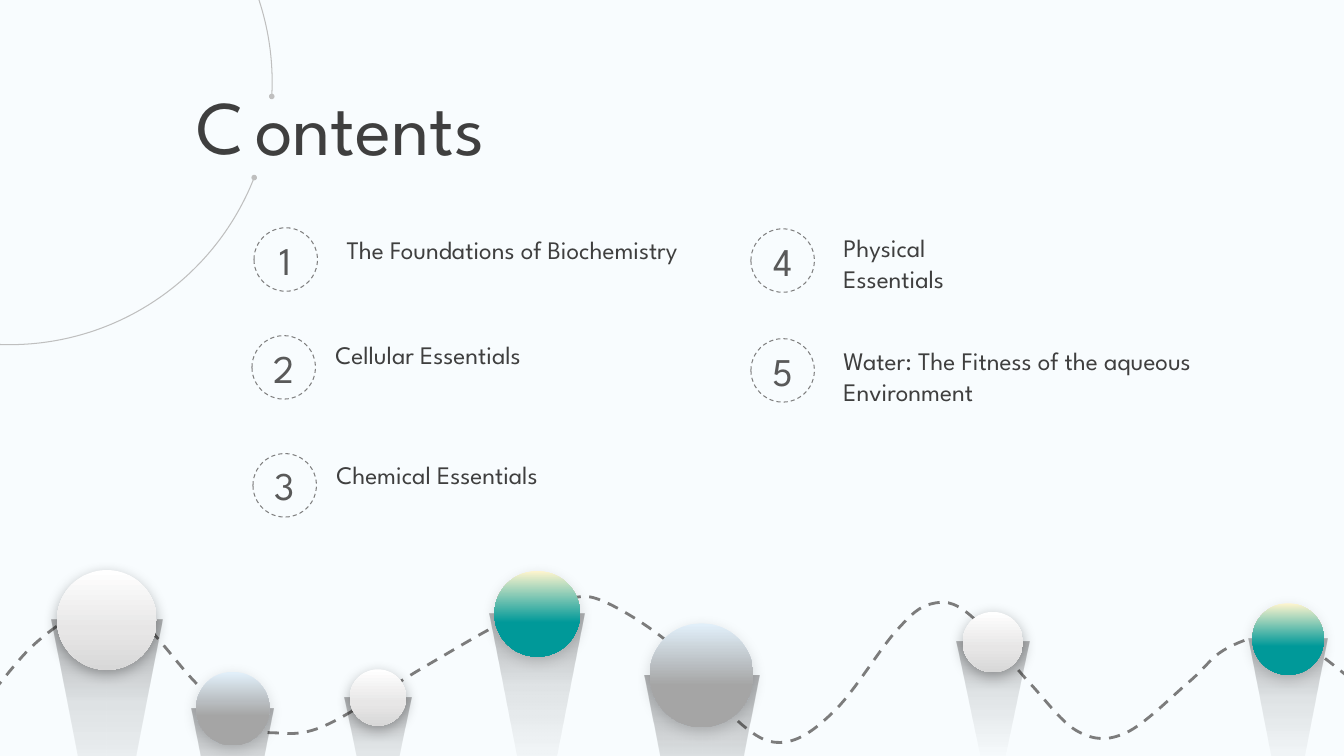
"""Build the contents slide: numbered topics above a row of balls on a wave."""
from lxml import etree
from pptx import Presentation, util as u
from pptx.dml.color import RGBColor
from pptx.enum import dml, shapes, text
from pptx.oxml.ns import qn

FONT = "League Spartan"
PAPER = RGBColor(0xF8, 0xFC, 0xFE)
INK = RGBColor(0x3F, 0x3F, 0x3F)
NUMBER = RGBColor(0x59, 0x59, 0x59)
RING = RGBColor(0x7F, 0x7F, 0x7F)
ARC = RGBColor(0xBF, 0xBF, 0xBF)
WAVE = RGBColor(0x7C, 0x7C, 0x7C)
BLACK = RGBColor(0, 0, 0)
WHITE = RGBColor(0xFF, 0xFF, 0xFF)
SILVER = RGBColor(0xE7, 0xE6, 0xE6)
PEARL = RGBColor(0xD8, 0xD8, 0xD8)
ICE = RGBColor(0xE1, 0xEF, 0xF9)
GREY = RGBColor(0xA5, 0xA5, 0xA5)
CREAM = RGBColor(0xFF, 0xF5, 0xCE)
TEAL = RGBColor(0x00, 0x99, 0x99)

HEADING = [("C", (1.85, 0.73, 0.82, 1.01)), ("ontents", (2.43, 0.74, 3.38, 1.01))]
RING_SIZE = 0.63
TOPIC_HEIGHT = 0.64
TOPICS = [
    ("The Foundations of Biochemistry", (2.52, 2.26), (3.34, 2.28), 3.82),
    ("Cellular Essentials", (2.5, 3.33), (3.23, 3.32), 2.24),
    ("Chemical Essentials", (2.51, 4.5), (3.24, 4.51), 2.23),
    ("Physical Essentials", (7.45, 2.27), (8.27, 2.26), 2.03),
    ("Water: The Fitness of the aqueous Environment", (7.45, 3.36), (8.27, 3.38), 3.73),
]
WAVE_POINTS = [
    (-0.06, 6.85), (0.29, 6.44), (0.64, 6.16), (0.92, 6.02), (1.25, 6.06), (1.49, 6.25),
    (1.91, 6.74), (2.24, 7.05), (2.46, 7.2), (2.71, 7.27), (3.22, 7.2), (4.22, 6.61),
    (5, 6.17), (5.54, 5.98), (5.95, 5.95), (6.7, 6.43), (7.35, 7.18), (7.8, 7.36),
    (8.3, 7.03), (8.89, 6.26), (9.24, 5.99), (9.61, 6.09), (10.21, 6.77), (10.7, 7.26),
    (11.17, 7.27), (11.79, 6.77), (12.14, 6.45), (12.58, 6.3), (12.95, 6.4), (13.42, 6.75),
]
BALL_STYLES = {
    "white": ([(0, WHITE, 100), (60, SILVER, 100), (100, PEARL, 100)], 30),
    "grey": ([(0, ICE, 100), (1, ICE, 100), (60, GREY, 100), (100, GREY, 100)], 15),
    "teal": ([(0, CREAM, 100), (60, TEAL, 100), (100, TEAL, 100)], 15),
}
BEAM_STOPS = [(0, BLACK, 0), (30, BLACK, 0), (50, BLACK, 5), (70, BLACK, 10), (100, BLACK, 30)]
BEAM_SHARES = [(-1, 1), (-0.67, 0.67), (-0.07, 0), (0, 0), (0.07, 0), (0.67, 0.67), (1, 1)]
BALLS = [
    ("white", 1.06, 6.15, 0.99, 1.1, 2.72),
    ("grey", 2.31, 7.03, 0.73, 0.81, 2),
    ("white", 3.75, 6.92, 0.56, 0.66, 1.53),
    ("teal", 5.33, 6.09, 0.85, 0.94, 2.33),
    ("grey", 6.96, 6.7, 1.03, 1.14, 2.8),
    ("white", 9.85, 6.37, 0.6, 0.72, 1.65),
    ("teal", 12.78, 6.34, 0.71, 0.78, 1.93),
]


def inches(*lengths):
    return [u.Inches(length) for length in lengths]


def smooth_curve(anchors):
    padded = [anchors[0], *anchors, anchors[-1]]
    curve = [anchors[0]]
    for before, start, end, after in zip(padded, padded[1:], padded[2:], padded[3:]):
        first = [s + (e - b) / 6 for b, s, e in zip(before, start, end)]
        second = [e - (a - s) / 6 for s, e, a in zip(start, end, after)]
        curve += [first, second, end]
    return curve


def add_curve(parent, points, closed):
    corners = [inches(*point) for point in points]
    builder = parent.build_freeform(*corners[0])
    builder.add_line_segments(corners[1:], close=closed)
    shape = builder.convert_to_shape()
    shape.shadow.inherit = False
    lines = list(shape.element.spPr.iter(qn("a:lnTo")))
    for first, second, end in zip(lines[::3], lines[1::3], lines[2::3]):
        bend = etree.Element(qn("a:cubicBezTo"))
        first.addprevious(bend)
        for line in (first, second, end):
            bend.append(line[0])
            line.getparent().remove(line)
    return shape


def add_preset(parent, preset, *place):
    shape = parent.add_shape(preset, *inches(*place))
    shape.shadow.inherit = False
    return shape


def draw_line(shape, color, width, dash=None):
    shape.fill.background()
    shape.line.color.rgb = color
    shape.line.width = u.Pt(width)
    if dash:
        shape.line.dash_style = dash


def add_color(parent, color, opacity):
    node = etree.SubElement(parent, qn("a:srgbClr"), val=str(color))
    if opacity < 100:
        etree.SubElement(node, qn("a:alpha"), val=str(opacity * 1000))


def fill_downward(shape, stops):
    shape.line.fill.background()
    shape.fill.gradient()
    gradient = shape.element.spPr.find(qn("a:gradFill"))
    for child in list(gradient):
        gradient.remove(child)
    gradient.set("rotWithShape", "1")
    stop_list = etree.SubElement(gradient, qn("a:gsLst"))
    for position, color, opacity in stops:
        stop = etree.SubElement(stop_list, qn("a:gs"), pos=str(position * 1000))
        add_color(stop, color, opacity)
    etree.SubElement(gradient, qn("a:lin"), ang="5400000", scaled="0")


def add_ball(page, style, center, middle, size, beam_width, beam_height):
    stops, shade = BALL_STYLES[style]
    group = page.shapes.add_group_shape().shapes
    outline = [(center + x * beam_width / 2, middle + y * beam_height) for x, y in BEAM_SHARES]
    beam = add_curve(group, outline, True)
    beam.rotation = 180
    fill_downward(beam, BEAM_STOPS)
    ball = add_preset(group, shapes.MSO_SHAPE.OVAL,
                      center - size / 2, middle - size / 2, size, size)
    fill_downward(ball, stops)
    shadow = etree.SubElement(ball.element.spPr.find(qn("a:effectLst")), qn("a:outerShdw"),
                              blurRad=str(u.Pt(10)), dist=str(u.Pt(3)), dir="5400000",
                              algn="t", rotWithShape="0")
    add_color(shadow, BLACK, shade)


def write(shape, words, size, color, align=text.PP_ALIGN.LEFT, anchor=text.MSO_ANCHOR.TOP):
    frame = shape.text_frame
    frame.text = words
    frame.word_wrap = True
    frame.auto_size = text.MSO_AUTO_SIZE.NONE
    frame.vertical_anchor = anchor
    para = frame.paragraphs[0]
    para.alignment = align
    font = para.runs[0].font
    font.name, font.size, font.color.rgb = FONT, u.Pt(size), color


def main():
    deck = Presentation()
    deck.slide_width, deck.slide_height = inches(40 / 3, 7.5)
    page = deck.slides.add_slide(deck.slide_layouts[5])
    page.background.fill.solid()
    page.background.fill.fore_color.rgb = PAPER

    arc = add_preset(page.shapes, shapes.MSO_SHAPE.ARC, -2.51, -1.79, 5.21, 5.21)
    arc.adjustments[0], arc.adjustments[1] = 12.79, 1.88
    draw_line(arc, ARC, 0.75)
    for end in ("a:headEnd", "a:tailEnd"):
        etree.SubElement(arc.element.spPr.find(qn("a:ln")), qn(end),
                         type="oval", w="sm", len="sm")

    wave = add_curve(page.shapes, smooth_curve(WAVE_POINTS), False)
    draw_line(wave, WAVE, 2, dml.MSO_LINE.DASH)
    for ball in BALLS:
        add_ball(page, *ball)

    (initial, initial_place), (rest, rest_place) = HEADING
    write(page.shapes.add_textbox(*inches(*initial_place)), initial, 54, INK)
    title = page.shapes.title
    title.left, title.top, title.width, title.height = inches(*rest_place)
    write(title, rest, 54, INK)

    for number, (topic, ring_at, topic_at, width) in enumerate(TOPICS, 1):
        ring = add_preset(page.shapes, shapes.MSO_SHAPE.OVAL, *ring_at, RING_SIZE, RING_SIZE)
        draw_line(ring, RING, 0.75, dml.MSO_LINE.DASH)
        write(ring, str(number), 28, NUMBER, text.PP_ALIGN.CENTER, text.MSO_ANCHOR.MIDDLE)
        box = page.shapes.add_textbox(*inches(*topic_at, width, TOPIC_HEIGHT))
        write(box, topic, 18, INK)

    deck.save("out.pptx")


if __name__ == "__main__":
    main()
